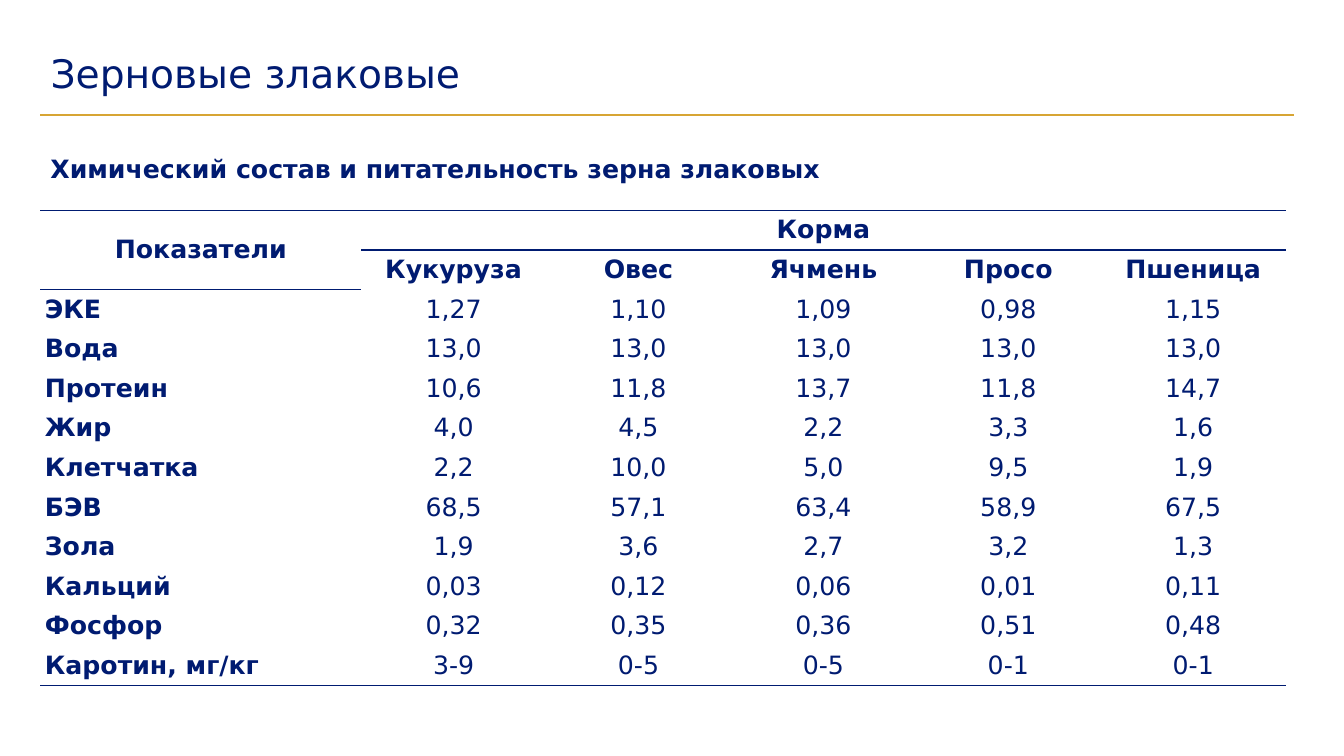
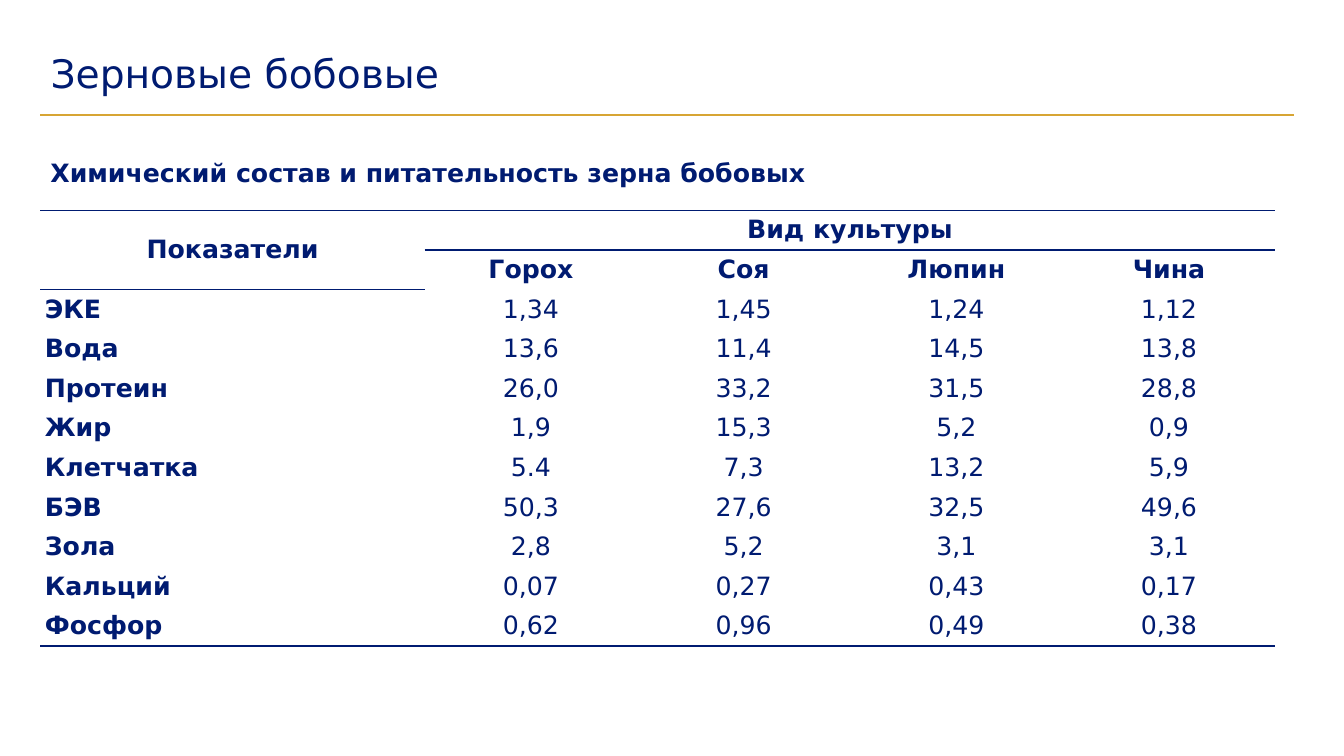
"""Builds two slides with feed composition tables for cereals and legumes."""
from dataclasses import dataclass

from lxml import etree
from pptx import Presentation
from pptx.dml.color import RGBColor
from pptx.enum.shapes import MSO_CONNECTOR
from pptx.enum.text import MSO_ANCHOR, MSO_AUTO_SIZE, PP_ALIGN
from pptx.oxml.ns import qn
from pptx.util import Cm, Pt

STRAIGHT = MSO_CONNECTOR.STRAIGHT
MIDDLE = MSO_ANCHOR.MIDDLE
NO_AUTOFIT = MSO_AUTO_SIZE.NONE
LEFT, CENTER = PP_ALIGN.LEFT, PP_ALIGN.CENTER
PLAIN_TABLE_STYLE = "{2D5ABB26-0587-4C30-8999-92F81FD0307C}"
TITLE_ONLY = 5


@dataclass(frozen=True)
class Theme:
    font: str = "DejaVu Sans"
    navy: str = "001B71"
    gold: str = "D7A534"
    title_size: int = 28
    body_size: int = 18
    rule_width: int = 1


THEME = Theme()
MARGIN = Cm(1.02)
TITLE_BOX = {"left": MARGIN, "top": Cm(1.14), "width": Cm(31.6), "height": Cm(1.52)}
TABLE_TOP = Cm(5.3)
ROW_HEIGHT = Cm(0.99)
CELL_FORMAT = {
    "vertical_anchor": MIDDLE,
    "margin_left": Cm(0.11),
    "margin_right": Cm(0.11),
    "margin_top": Cm(0.13),
    "margin_bottom": Cm(0.13),
}

TABLES = [
    {
        "title": "Зерновые злаковые",
        "subtitle": "Химический состав и питательность зерна злаковых",
        "subtitle_top": Cm(3.73),
        "label_width": Cm(8.08),
        "value_width": Cm(4.66),
        "rows": [
            ["Показатели", "Корма", "", "", "", ""],
            ["", "Кукуруза", "Овес", "Ячмень", "Просо", "Пшеница"],
            ["ЭКЕ", "1,27", "1,10", "1,09", "0,98", "1,15"],
            ["Вода", "13,0", "13,0", "13,0", "13,0", "13,0"],
            ["Протеин", "10,6", "11,8", "13,7", "11,8", "14,7"],
            ["Жир", "4,0", "4,5", "2,2", "3,3", "1,6"],
            ["Клетчатка", "2,2", "10,0", "5,0", "9,5", "1,9"],
            ["БЭВ", "68,5", "57,1", "63,4", "58,9", "67,5"],
            ["Зола", "1,9", "3,6", "2,7", "3,2", "1,3"],
            ["Кальций", "0,03", "0,12", "0,06", "0,01", "0,11"],
            ["Фосфор", "0,32", "0,35", "0,36", "0,51", "0,48"],
            ["Каротин, мг/кг", "3-9", "0-5", "0-5", "0-1", "0-1"],
        ],
    },
    {
        "title": "Зерновые бобовые",
        "subtitle": "Химический состав и питательность зерна бобовых",
        "subtitle_top": Cm(3.84),
        "label_width": Cm(9.68),
        "value_width": Cm(5.36),
        "rows": [
            ["Показатели", "Вид культуры", "", "", ""],
            ["", "Горох", "Соя", "Люпин", "Чина"],
            ["ЭКЕ", "1,34", "1,45", "1,24", "1,12"],
            ["Вода", "13,6", "11,4", "14,5", "13,8"],
            ["Протеин", "26,0", "33,2", "31,5", "28,8"],
            ["Жир", "1,9", "15,3", "5,2", "0,9"],
            ["Клетчатка", "5.4", "7,3", "13,2", "5,9"],
            ["БЭВ", "50,3", "27,6", "32,5", "49,6"],
            ["Зола", "2,8", "5,2", "3,1", "3,1"],
            ["Кальций", "0,07", "0,27", "0,43", "0,17"],
            ["Фосфор", "0,62", "0,96", "0,49", "0,38"],
        ],
    },
]


def write_text(paragraph, text, alignment=LEFT, **font_format):
    paragraph.text = text
    paragraph.alignment = alignment
    font_values = {"name": THEME.font, "size": Pt(THEME.body_size), "bold": False}
    for name, value in (font_values | font_format).items():
        setattr(paragraph.font, name, value)
    paragraph.font.color.rgb = RGBColor.from_string(THEME.navy)


def add_border(cell, side):
    properties = cell._tc.get_or_add_tcPr()
    border = etree.SubElement(properties, qn(f"a:{side}"), w=str(Pt(THEME.rule_width)))
    fill = etree.SubElement(border, qn("a:solidFill"))
    etree.SubElement(fill, qn("a:srgbClr"), val=THEME.navy)


presentation = Presentation()
presentation.slide_width = Cm(33.87)
presentation.slide_height = Cm(19.05)
layout = presentation.slide_layouts[TITLE_ONLY]

for content in TABLES:
    slide = presentation.slides.add_slide(layout)

    title = slide.shapes.title
    for name, value in TITLE_BOX.items():
        setattr(title, name, value)
    title.text_frame.auto_size = NO_AUTOFIT
    title.text_frame.vertical_anchor = MIDDLE
    title_paragraph = title.text_frame.paragraphs[0]
    write_text(title_paragraph, content["title"], size=Pt(THEME.title_size))
    title_paragraph.line_spacing = 0.9

    rows = content["rows"]
    row_count, column_count = len(rows), len(rows[0])
    widths = [content["label_width"]] + [content["value_width"]] * (column_count - 1)
    table_shape = slide.shapes.add_table(
        row_count, column_count, MARGIN, TABLE_TOP, sum(widths), ROW_HEIGHT * row_count
    )
    table = table_shape.table
    table.first_row = table.horz_banding = False
    table._tbl.tblPr.find(qn("a:tableStyleId")).text = PLAIN_TABLE_STYLE
    for column, width in zip(table.columns, widths):
        column.width = width
    for row in table.rows:
        row.height = ROW_HEIGHT
    table.cell(0, 0).merge(table.cell(1, 0))
    table.cell(0, 1).merge(table.cell(0, column_count - 1))

    for row_index, row_texts in enumerate(rows):
        is_header = row_index < 2
        for column_index, text in enumerate(row_texts):
            cell = table.cell(row_index, column_index)
            is_label = column_index == 0
            for name, value in CELL_FORMAT.items():
                setattr(cell, name, value)
            if row_index == 0:
                add_border(cell, "lnT")
            if row_index in (0, row_count - 1) or (is_header and is_label):
                add_border(cell, "lnB")
            cell.fill.background()
            write_text(
                cell.text_frame.paragraphs[0],
                text,
                LEFT if is_label and not is_header else CENTER,
                bold=is_header or is_label,
            )

    subtitle = slide.shapes.add_textbox(
        MARGIN, content["subtitle_top"], Cm(20.17), Cm(1.02)
    )
    subtitle.text_frame.word_wrap = False
    write_text(subtitle.text_frame.paragraphs[0], content["subtitle"], bold=True)

title_rule = slide.shapes.add_connector(STRAIGHT, MARGIN, Cm(2.9), Cm(32.61), Cm(2.9))
title_rule.line.color.rgb = RGBColor.from_string(THEME.gold)
title_rule.line.width = Pt(THEME.rule_width)
etree.SubElement(title_rule.element.spPr, qn("a:effectLst"))
layout.shapes.element.append(title_rule.element)

presentation.save("out.pptx")
